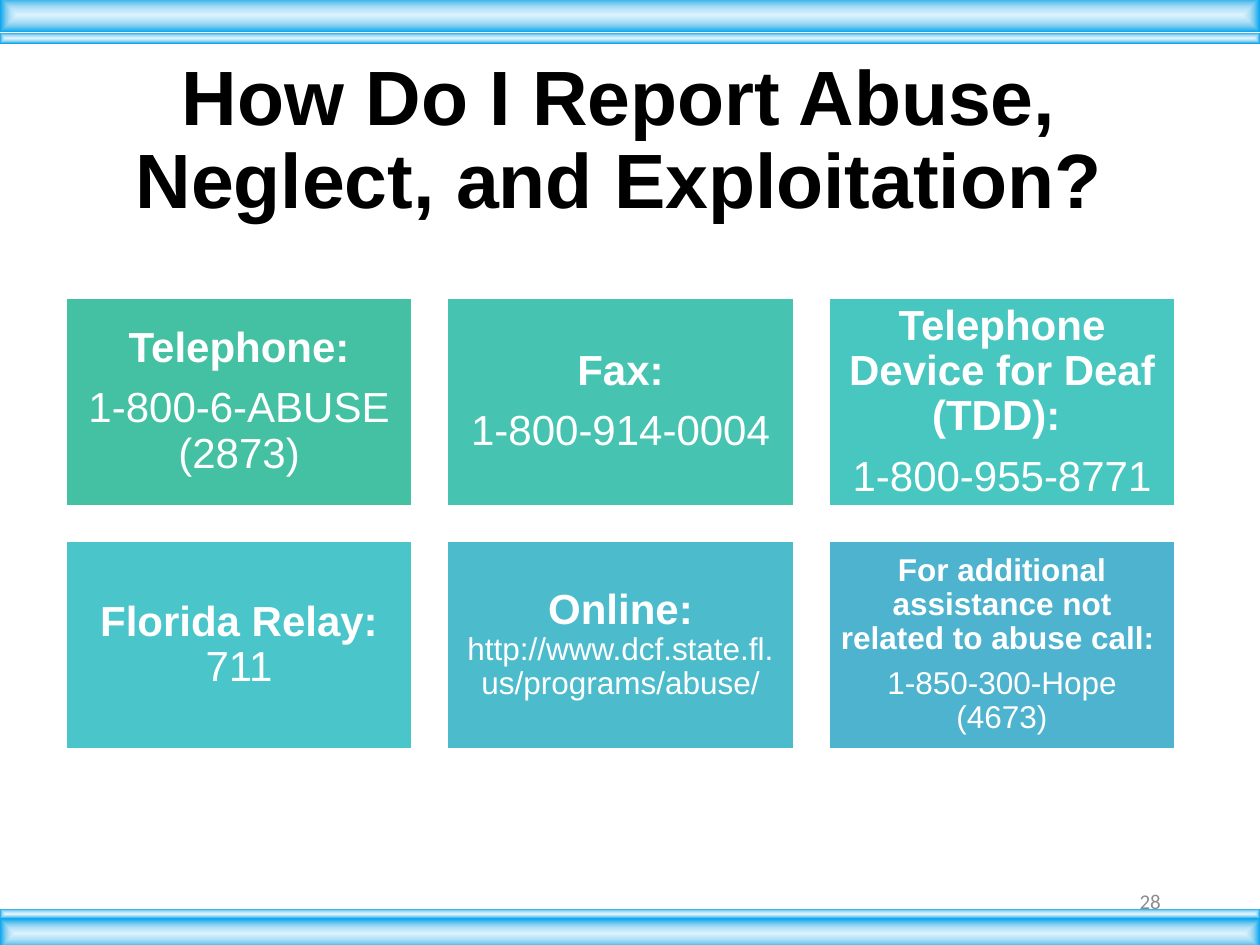
from dataclasses import dataclass

from lxml.etree import SubElement
from pptx import Presentation
from pptx.dml.color import RGBColor as Rgb
from pptx.enum.shapes import MSO_SHAPE as Shape
from pptx.enum.text import MSO_ANCHOR as Anchor, MSO_AUTO_SIZE as AutoSize, PP_ALIGN as Align
from pptx.oxml.ns import qn
from pptx.util import Cm, Pt


@dataclass(frozen=True)
class Theme:
    font: str = "Arial"
    number_font: str = "Calibri"
    ink: str = "000000"
    paper: str = "FFFFFF"
    muted: str = "8C8C8C"
    tiles: tuple = ("44C1A3", "46C4B1", "48C7C0", "4AC5CA", "4CBCCC", "4EB3CF")
    band: tuple = ((0, "DCF3FE"), (40, "AFE0F7"), (64, "7ECCEF"), (100, "08A5EF"))
    title: int = 44
    large: int = 24
    small: int = 18
    number: int = 12


class SlideBuilder:
    def __init__(self, page, theme):
        self.page = page
        self.theme = theme

    def add_span(self, para, text, size, color, bold=False, font=None):
        span = para.add_run()
        span.text = text
        span.font.name = font or self.theme.font
        span.font.size = Pt(size)
        span.font.bold = bold
        span.font.color.rgb = Rgb.from_string(color)

    def rectangle(self, left, top, width, height):
        box = self.page.shapes.add_shape(
            Shape.RECTANGLE, Cm(left), Cm(top), Cm(width), Cm(height))
        box.shadow.inherit = False
        return box

    def title(self, text):
        box = self.page.shapes.title
        box.left, box.top, box.width, box.height = Cm(1.32), Cm(1.02), Cm(22.33), Cm(3.68)
        frame = box.text_frame
        frame.word_wrap = True
        frame.auto_size = AutoSize.NONE
        frame.vertical_anchor = Anchor.MIDDLE
        para = frame.paragraphs[0]
        para.alignment = Align.CENTER
        para.line_spacing = 0.9
        self.add_span(para, text, self.theme.title, self.theme.ink, bold=True)

    def tile(self, left, top, width, height, color, inset, paragraphs):
        box = self.rectangle(left, top, width, height)
        box.fill.solid()
        box.fill.fore_color.rgb = Rgb.from_string(color)
        box.line.color.rgb = Rgb.from_string(self.theme.paper)
        box.line.width = Pt(1)
        frame = box.text_frame
        frame.word_wrap = True
        frame.vertical_anchor = Anchor.MIDDLE
        frame.margin_left = frame.margin_right = Cm(inset)
        frame.margin_top = frame.margin_bottom = Cm(inset)
        for index, spans in enumerate(paragraphs):
            para = frame.add_paragraph() if index else frame.paragraphs[0]
            para.alignment = Align.CENTER
            para.line_spacing = 0.9
            para.space_after = Pt(spans[0][1] * 0.35)
            for text, size, bold in spans:
                self.add_span(para, text, size, self.theme.paper, bold)

    def band(self, top, height):
        box = self.rectangle(0, top, 25.4, height)
        box.line.fill.background()
        box.fill.gradient()
        gradient = box.element.spPr.find(qn("a:gradFill"))
        for child in list(gradient):
            gradient.remove(child)
        stops = SubElement(gradient, qn("a:gsLst"))
        for percent, color in self.theme.band:
            stop = SubElement(stops, qn("a:gs"), pos=str(percent * 1000))
            SubElement(stop, qn("a:srgbClr"), val=color)
        shade = SubElement(gradient, qn("a:path"), attrib={"path": "shape"})
        SubElement(shade, qn("a:fillToRect"), l="50000", t="50000", r="50000", b="50000")

    def page_number(self, text):
        box = self.page.shapes.add_textbox(Cm(17.93), Cm(17.65), Cm(5.72), Cm(1.02))
        frame = box.text_frame
        frame.word_wrap = True
        frame.vertical_anchor = Anchor.MIDDLE
        para = frame.paragraphs[0]
        para.alignment = Align.RIGHT
        self.add_span(para, text, self.theme.number, self.theme.muted,
                      font=self.theme.number_font)


def main():
    deck = Presentation()
    deck.slide_width, deck.slide_height = Cm(25.4), Cm(19.05)
    theme = Theme()
    builder = SlideBuilder(deck.slides.add_slide(deck.slide_layouts[5]), theme)
    large, small = theme.large, theme.small

    builder.title("How Do I Report Abuse, Neglect, and Exploitation?")

    contacts = [
        [[("Telephone:", large, True)], [("1-800-6-ABUSE (2873)", large, False)]],
        [[("Fax:", large, True)], [("1-800-914-0004", large, False)]],
        [[("Telephone Device for Deaf (TDD): ", large, True)],
         [("1-800-955-8771", large, False)]],
        [[("Florida Relay: ", large, True), ("711", large, False)]],
        [[("Online: ", large, True),
          ("http://www.dcf.state.fl.us/programs/abuse/", small, False)]],
        [[("For additional assistance not related to abuse call: ", small, True)],
         [("1-850-300-Hope (4673)", small, False)]],
    ]
    width, height, gap = 6.98, 4.19, 0.71
    for index, (color, paragraphs) in enumerate(zip(theme.tiles, contacts)):
        row, column = divmod(index, 3)
        inset = 0.25 if paragraphs[0][0][1] == large else 0.18
        builder.tile(1.33 + column * (width + gap), 6.01 + row * (height + gap),
                     width, height, color, inset, paragraphs)

    for top, band_height in ((0.66, 0.22), (-0.05, 0.7), (18.32, 0.2), (18.52, 0.6)):
        builder.band(top, band_height)
    builder.page_number("28")

    deck.save("out.pptx")


if __name__ == "__main__":
    main()
